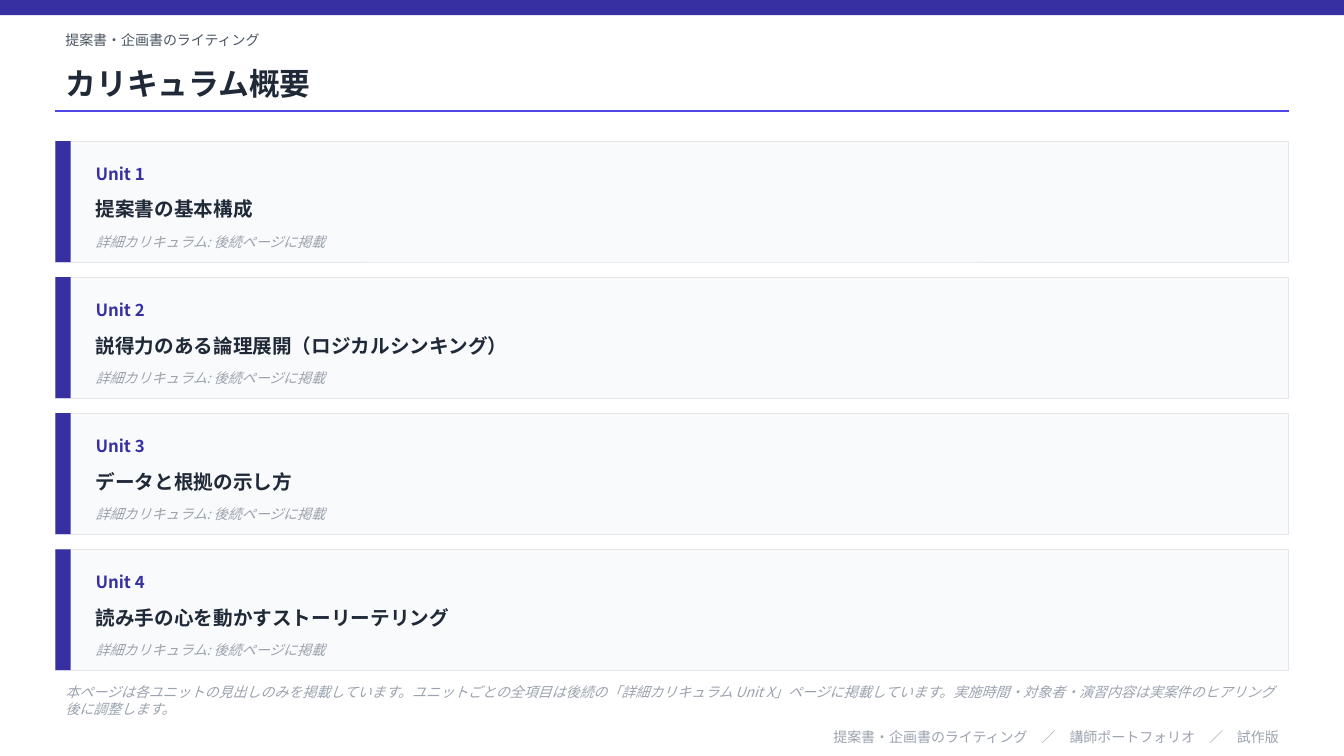
"""Build the curriculum overview slide."""
from lxml.etree import SubElement
from pptx import Presentation
from pptx.dml.color import RGBColor
from pptx.enum.shapes import MSO_CONNECTOR, MSO_SHAPE
from pptx.enum.text import MSO_ANCHOR, MSO_AUTO_SIZE, PP_ALIGN
from pptx.oxml.ns import qn
from pptx.util import Pt

COURSE = "提案書・企画書のライティング"
TITLE = "カリキュラム概要"
UNITS = [
    "提案書の基本構成",
    "説得力のある論理展開（ロジカルシンキング）",
    "データと根拠の示し方",
    "読み手の心を動かすストーリーテリング",
]
DETAIL = "詳細カリキュラム: 後続ページに掲載"
NOTE = (
    "本ページは各ユニットの見出しのみを掲載しています。"
    "ユニットごとの全項目は後続の「詳細カリキュラム Unit X」ページに掲載しています。"
    "実施時間・対象者・演習内容は実案件のヒアリング後に調整します。"
)
FOOTER = "　／　".join([COURSE, "講師ポートフォリオ", "試作版"])

FONT = "Noto Sans CJK JP"
INDIGO, VIOLET, INK, SLATE = "3730A3", "4F46E5", "1F2937", "4B5563"
MUTED, CARD, BORDER = "9CA3AF", "F9FAFB", "E5E7EB"

SLIDE_W, SLIDE_H = 959.76, 540
LEFT, WIDTH = 39.6, 880.56
CARD_TOP, CARD_H, CARD_PITCH = 100.8, 86.4, 97.2
BAR_W = 10.8
TEXT_LEFT, TEXT_W = 61.2, 844.56


def rgb(color):
    return RGBColor.from_string(color)


def place(sp, x, y, w, h):
    sp.left, sp.top, sp.width, sp.height = Pt(x), Pt(y), Pt(w), Pt(h)


def write(sp, text, size, color, bold=False, italic=False, align=PP_ALIGN.LEFT):
    tf = sp.text_frame
    tf.word_wrap = True
    tf.auto_size = MSO_AUTO_SIZE.NONE
    tf.vertical_anchor = MSO_ANCHOR.MIDDLE
    p = tf.paragraphs[0]
    p.alignment = align
    r = p.add_run()
    r.text = text
    r.font.size = Pt(size)
    r.font.bold = bold
    r.font.italic = italic
    r.font.color.rgb = rgb(color)
    r.font.name = FONT
    SubElement(r.font._element, qn("a:ea"), typeface=FONT)


def add_text(s, box, text, size, color, **style):
    write(s.shapes.add_textbox(*map(Pt, box)), text, size, color, **style)


def add_rect(s, box, fill, line=None):
    sp = s.shapes.add_shape(MSO_SHAPE.RECTANGLE, *map(Pt, box))
    sp.shadow.inherit = False
    sp.fill.solid()
    sp.fill.fore_color.rgb = rgb(fill)
    if line:
        sp.line.color.rgb = rgb(line)
        sp.line.width = Pt(0.5)
    else:
        sp.line.fill.background()


def add_header(s):
    add_rect(s, (0, 0, SLIDE_W, 10.8), INDIGO)
    add_text(s, (LEFT, 18, WIDTH, 21.6), COURSE, 10, SLATE)
    place(s.shapes.title, LEFT, 39.6, WIDTH, 39.6)
    write(s.shapes.title, TITLE, 22, INK, bold=True)
    rule = s.shapes.add_connector(
        MSO_CONNECTOR.STRAIGHT, Pt(LEFT), Pt(79.2), Pt(LEFT + WIDTH), Pt(79.2))
    rule.line.color.rgb = rgb(VIOLET)
    rule.line.width = Pt(1)
    SubElement(rule._element.spPr, qn("a:effectLst"))


def add_unit(s, index, heading):
    top = CARD_TOP + index * CARD_PITCH
    add_rect(s, (LEFT, top, WIDTH, CARD_H), CARD, BORDER)
    add_rect(s, (LEFT, top, BAR_W, CARD_H), INDIGO)
    add_text(s, (TEXT_LEFT, top + 8.64, 108, 28.8), f"Unit {index + 1}", 12, INDIGO, bold=True)
    add_text(s, (TEXT_LEFT, top + 32.4, TEXT_W, 32.4), heading, 14, INK, bold=True)
    add_text(s, (TEXT_LEFT, top + 61.2, TEXT_W, 21.6), DETAIL, 10, MUTED, italic=True)


def main():
    prs = Presentation()
    prs.slide_width, prs.slide_height = Pt(SLIDE_W), Pt(SLIDE_H)
    s = prs.slides.add_slide(prs.slide_layouts[5])
    add_header(s)
    for index, heading in enumerate(UNITS):
        add_unit(s, index, heading)
    add_text(s, (LEFT, 486, WIDTH, 28.8), NOTE, 10, MUTED, italic=True)
    add_text(s, (LEFT, 518.4, WIDTH, 15.84), FOOTER, 10, MUTED, align=PP_ALIGN.RIGHT)
    prs.save("out.pptx")


if __name__ == "__main__":
    main()
